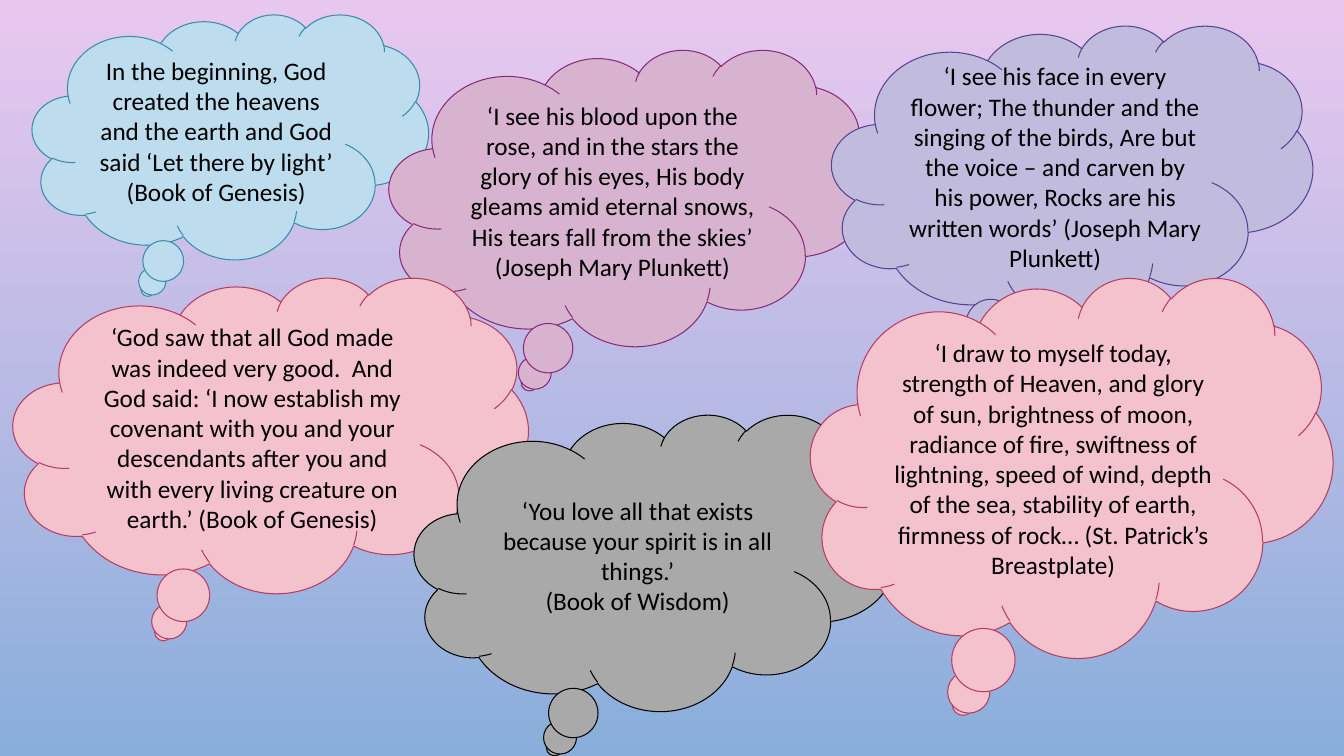
import pptx
import pptx.util
import pptx.dml.color
import pptx.enum.shapes
import pptx.enum.text

THEME = {
    "font": "Calibri",
    "size": 18,
    "text": "000000",
    "outline": 0.75,
    "sky": ("E9C8EF", "89AEDB"),
    # cloud colours: fill, line
    "blue": ("BDDDEE", "368CAB"),
    "plum": ("D8B3D0", "8A297B"),
    "violet": ("C1BCDE", "544293"),
    "pink": ("F4C2CD", "B63C62"),
    "grey": ("A9A9A9", "000000"),
}

MEDIUM = (4.77, 2.94)

# colour, (left, top), (width, height), paragraphs; from back to front
QUOTES = [
    ("blue", (0.32, 0.14), (3.93, 2.43), [
        "In the beginning, God created the heavens and the earth and God said "
        "‘Let there by light’ (Book of Genesis)"]),
    ("plum", (3.86, 0.49), MEDIUM, [
        "‘I see his blood upon the rose, and in the stars the glory of his eyes, "
        "His body gleams amid eternal snows, His tears fall from the skies’ "
        "(Joseph Mary Plunkett)"]),
    ("violet", (8.25, 0.25), MEDIUM, [
        "‘I see his face in every flower; The thunder and the singing of the birds, "
        "Are but the voice – and carven by his power, Rocks are his written words’ "
        "(Joseph Mary Plunkett)"]),
    ("pink", (0.13, 2.75), (5.11, 3.13), [
        "‘God saw that all God made was indeed very good.  And God said: "
        "‘I now establish my covenant with you and your descendants after you and "
        "with every living creature on earth.’ (Book of Genesis)"]),
    ("grey", (4.11, 4.11), MEDIUM, [
        "‘You love all that exists because your spirit is in all things.’",
        "(Book of Wisdom)"]),
    ("pink", (8.04, 2.75), (5.18, 3.77), [
        "‘I draw to myself today, strength of Heaven, and glory of sun, "
        "brightness of moon, radiance of fire, swiftness of lightning, "
        "speed of wind, depth of the sea, stability of earth, firmness of rock… "
        "(St. Patrick’s Breastplate)"]),
]

Inches = pptx.util.Inches
Pt = pptx.util.Pt
rgb = pptx.dml.color.RGBColor.from_string


def paint_sky(page):
    fill = page.background.fill
    fill.gradient()
    fill.gradient_angle = 270  # counter-clockwise, so top to bottom
    for stop, colour in zip(fill.gradient_stops, THEME["sky"]):
        stop.color.rgb = rgb(colour)


def add_cloud(page, colour, corner, size, paragraphs):
    fill, line = THEME[colour]
    cloud = page.shapes.add_shape(
        pptx.enum.shapes.MSO_SHAPE.CLOUD_CALLOUT,
        *(Inches(length) for length in corner + size))
    cloud.shadow.inherit = False
    cloud.fill.solid()
    cloud.fill.fore_color.rgb = rgb(fill)
    cloud.line.color.rgb = rgb(line)
    cloud.line.width = Pt(THEME["outline"])

    frame = cloud.text_frame
    frame.word_wrap = True
    frame.vertical_anchor = pptx.enum.text.MSO_ANCHOR.MIDDLE
    for index, words in enumerate(paragraphs):
        para = frame.add_paragraph() if index else frame.paragraphs[0]
        para.alignment = pptx.enum.text.PP_ALIGN.CENTER
        span = para.add_run()
        span.text = words
        span.font.name = THEME["font"]
        span.font.size = Pt(THEME["size"])
        span.font.color.rgb = rgb(THEME["text"])


def main():
    deck = pptx.Presentation()
    deck.slide_width, deck.slide_height = Inches(13.33), Inches(7.5)
    page = deck.slides.add_slide(deck.slide_layouts[6])
    paint_sky(page)
    for quote in QUOTES:
        add_cloud(page, *quote)
    deck.save("out.pptx")


if __name__ == "__main__":
    main()
